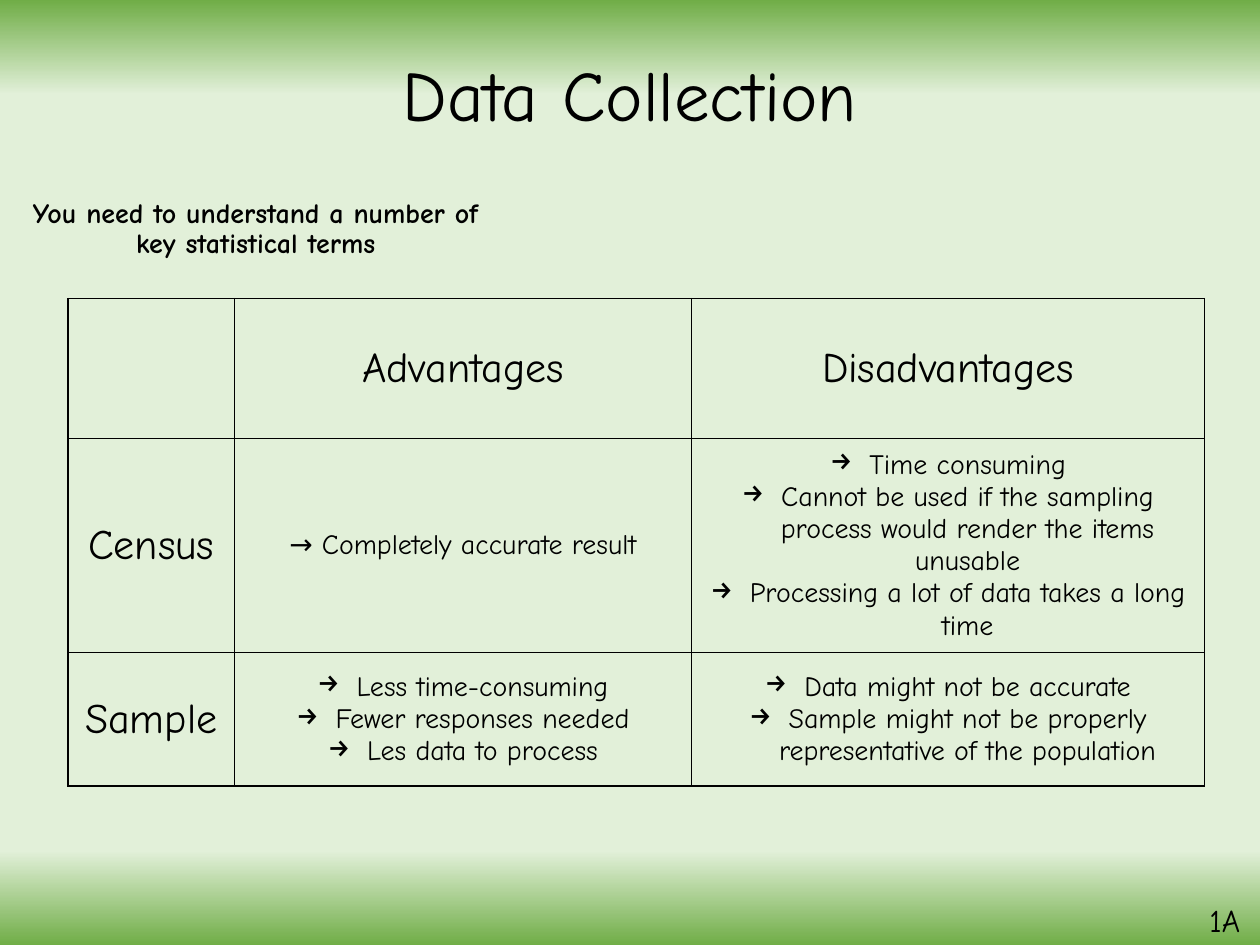
from lxml import etree
from pptx import Presentation
from pptx.dml.color import RGBColor
from pptx.enum.text import MSO_ANCHOR, MSO_AUTO_SIZE, PP_ALIGN
from pptx.oxml.ns import qn
from pptx.util import Inches, Pt

MIDDLE, TOP = MSO_ANCHOR.MIDDLE, MSO_ANCHOR.TOP
CENTER, LEFT = PP_ALIGN.CENTER, PP_ALIGN.LEFT
NO_FIT = MSO_AUTO_SIZE.NONE
BLACK = RGBColor(0x00, 0x00, 0x00)
GREEN = RGBColor(0x70, 0xAD, 0x47)
PALE_GREEN = RGBColor(0xE2, 0xF0, 0xD9)
FONT = "Comic Neue"
WIDTH, HEIGHT = 10, 7.5
HEADING_SIZE, BODY_SIZE = 24, 16
BULLET_INDENT = Inches(0.31)
COLUMNS = (1.32, 3.63, 4.07)
ROWS = (1.11, 1.7, 1.06)
HEADINGS = ("", "Advantages", "Disadvantages")
METHODS = (
    ("Census", ["→ Completely accurate result"], [
        "Time consuming",
        "Cannot be used if the sampling process would render the items unusable",
        "Processing a lot of data takes a long time",
    ]),
    ("Sample", [
        "Less time-consuming",
        "Fewer responses needed",
        "Les data to process",
    ], [
        "Data might not be accurate",
        "Sample might not be properly representative of the population",
    ]),
)


def set_background(page):
    """Fade the page from green edges to a pale green middle."""
    fill = page.background.fill
    fill.gradient()
    fill.gradient_angle = 90
    stops = page.background._cSld.find(".//" + qn("a:gsLst"))
    for stop in list(stops):
        stops.remove(stop)
    for percent, color in ((0, GREEN), (10, PALE_GREEN), (90, PALE_GREEN), (100, GREEN)):
        stop = etree.SubElement(stops, qn("a:gs"), pos=str(percent * 1000))
        etree.SubElement(stop, qn("a:srgbClr"), val=str(color))


def write(para, text, size, align=CENTER, bold=False):
    """Write one styled paragraph."""
    para.text = text
    para.alignment = align
    font = para.font
    font.name, font.size, font.bold = FONT, Pt(size), bold
    font.color.rgb = BLACK


def place(box, left, top, width, height):
    """Move and size a box, in inches."""
    box.left, box.top = Inches(left), Inches(top)
    box.width, box.height = Inches(width), Inches(height)


def add_title(page, text):
    """Format the title placeholder."""
    title = page.shapes.title
    place(title, 0.69, 0.24, WIDTH - 2 * 0.69, 1.09)
    title.text_frame.auto_size = NO_FIT
    title.text_frame.vertical_anchor = MIDDLE
    para = title.text_frame.paragraphs[0]
    write(para, text, 40.5)
    para.line_spacing = 0.9


def add_text(page, area, text, size, align, bold=False, wrap=True):
    """Add a text box and return its paragraph."""
    frame = page.shapes.add_textbox(*map(Inches, area)).text_frame
    frame.word_wrap = wrap
    frame.vertical_anchor = TOP
    para = frame.paragraphs[0]
    write(para, text, size, align, bold)
    return para


def add_arrow_bullet(para):
    """Give a paragraph a hanging arrow bullet."""
    properties = para._p.get_or_add_pPr()
    properties.set("marL", str(BULLET_INDENT))
    properties.set("indent", str(-BULLET_INDENT))
    bullet = etree.Element(qn("a:buChar"), char="→")
    properties.find(qn("a:defRPr")).addprevious(bullet)


def draw_borders(cell):
    """Draw a thin black line on each side of a cell."""
    properties = cell._tc.get_or_add_tcPr()
    for position, side in enumerate(("lnL", "lnR", "lnT", "lnB")):
        line = etree.Element(qn("a:" + side), w=str(Pt(1)))
        fill = etree.SubElement(line, qn("a:solidFill"))
        etree.SubElement(fill, qn("a:srgbClr"), val=str(BLACK))
        properties.insert(position, line)


def fill_cell(cell, lines, size):
    """Write the lines of a cell, with bullets where there are several."""
    cell.fill.background()
    cell.vertical_anchor = MIDDLE
    draw_borders(cell)
    frame = cell.text_frame
    for number, text in enumerate(lines):
        para = frame.add_paragraph() if number else frame.paragraphs[0]
        write(para, text, size)
        if len(lines) > 1:
            add_arrow_bullet(para)


def add_comparison(page):
    """Add the table of advantages and disadvantages."""
    area = map(Inches, (0.54, 2.37, sum(COLUMNS), sum(ROWS)))
    table = page.shapes.add_table(len(ROWS), len(COLUMNS), *area).table
    table.first_row = table.horz_banding = False
    for column, width in zip(table.columns, COLUMNS):
        column.width = Inches(width)
    for row, height in zip(table.rows, ROWS):
        row.height = Inches(height)
    for index, heading in enumerate(HEADINGS):
        fill_cell(table.cell(0, index), [heading], HEADING_SIZE)
    for index, (method, *points) in enumerate(METHODS, start=1):
        fill_cell(table.cell(index, 0), [method], HEADING_SIZE)
        for column, lines in enumerate(points, start=1):
            fill_cell(table.cell(index, column), lines, BODY_SIZE)


def main():
    """Build and save the deck."""
    deck = Presentation()
    deck.slide_width, deck.slide_height = Inches(WIDTH), Inches(HEIGHT)
    page = deck.slides.add_slide(deck.slide_layouts[5])
    set_background(page)
    add_title(page, "Data Collection")
    intro = add_text(
        page, (0.16, 1.53, 3.74, 5.22),
        "You need to understand a number of key statistical terms",
        BODY_SIZE, CENTER, bold=True)
    intro.line_spacing = 0.9
    intro.space_before = Pt(10)
    add_text(page, (WIDTH - 0.5, HEIGHT - 0.4, 0.5, 0.4), "1A", 18, LEFT, wrap=False)
    add_comparison(page)
    deck.save("out.pptx")


if __name__ == "__main__":
    main()
